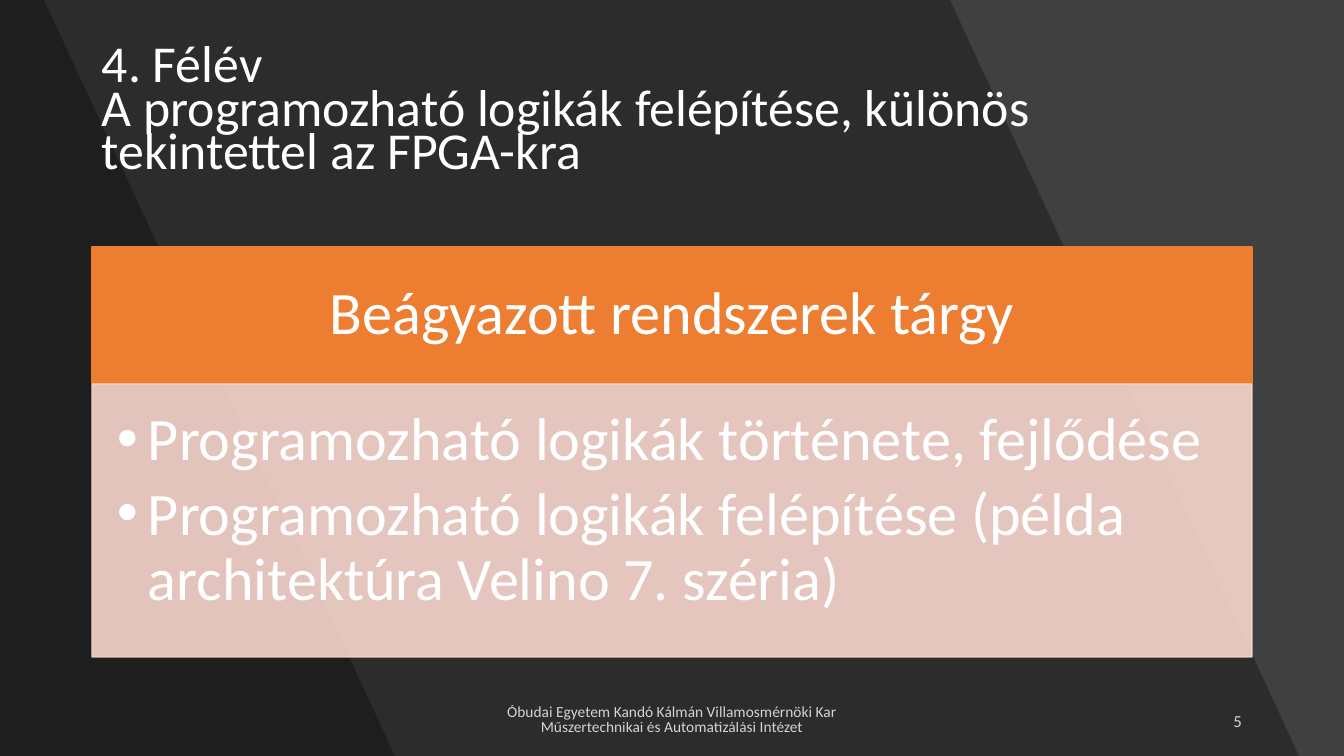
import pptx
import pptx.util
import pptx.dml.color
import pptx.enum.shapes
import pptx.enum.text
import pptx.oxml.ns
from lxml import etree

PX = 914400 / 100.8
WIDTH, HEIGHT = 1344, 756
COLORS = {
    "background": "404040",
    "shade": "000000",
    "text": "FFFFFF",
    "subject": "ED7D31",
    "topics": "F8D7CE",
}
ALIGN = pptx.enum.text.PP_ALIGN
ANCHOR = pptx.enum.text.MSO_ANCHOR


def paint(fill, color, opacity=100):
    """Give a fill a solid colour with an opacity in percent."""
    fill.solid()
    fill.fore_color.rgb = pptx.dml.color.RGBColor.from_string(COLORS[color])
    if opacity < 100:
        rgb = next(fill._xPr.iter(pptx.oxml.ns.qn("a:srgbClr")))
        etree.SubElement(rgb, pptx.oxml.ns.qn("a:alpha"), val=str(opacity * 1000))


def write(box, insets, lines, size, align=ALIGN.LEFT, anchor=ANCHOR.MIDDLE,
          spacing=1.0, opacity=100):
    """Fill a shape with paragraphs; insets are left, top, right, bottom in px."""
    frame = box.text_frame
    frame.word_wrap = True
    frame.vertical_anchor = anchor
    (frame.margin_left, frame.margin_top,
     frame.margin_right, frame.margin_bottom) = [round(i * PX) for i in insets]
    frame.text = "\n".join(lines)
    for paragraph in frame.paragraphs:
        paragraph.alignment = align
        paragraph.line_spacing = spacing
        for run in paragraph.runs:
            run.font.name = "Calibri"
            run.font.size = pptx.util.Pt(size)
            paint(run.font.fill, "text", opacity)


deck = pptx.Presentation()
deck.slide_width, deck.slide_height = round(WIDTH * PX), round(HEIGHT * PX)
slide = deck.slides.add_slide(deck.slide_layouts[6])
paint(slide.background.fill, "background")

# Slanted shades: top and bottom end of each right edge
for top_right, bottom_right in [(950, 1299), (44, 395)]:
    outline = slide.shapes.build_freeform(0, 0, scale=PX)
    outline.add_line_segments(
        [(top_right, 0), (bottom_right, HEIGHT), (0, HEIGHT)], close=True)
    shade = outline.convert_to_shape()
    shade.shadow.inherit = False
    paint(shade.fill, "shade", 30)
    shade.line.fill.background()

title = slide.shapes.add_textbox(*[round(v * PX) for v in (92, 40, 1160, 146)])
write(title, (10, 5, 10, 5),
      ["4. Félév\vA programozható logikák felépítése, különös tekintettel az FPGA-kra"],
      37, spacing=0.7)

# Subject header and the topics panel below it
panels = {}
for part, top, height, opacity in [("subject", 247, 136, 100), ("topics", 384, 273, 90)]:
    panel = slide.shapes.add_shape(
        pptx.enum.shapes.MSO_SHAPE.RECTANGLE,
        *[round(v * PX) for v in (92, top, 1160, height)])
    panel.shadow.inherit = False
    paint(panel.fill, part, opacity)
    paint(panel.line.fill, part, opacity)
    panel.line.width = pptx.util.Pt(1)
    panels[part] = panel

write(panels["subject"], (33, 19, 33, 19), ["Beágyazott rendszerek tárgy"],
      43, ALIGN.CENTER, spacing=0.9)
write(panels["topics"], (25, 25, 33, 38),
      ["Programozható logikák története, fejlődése",
       "Programozható logikák felépítése (példa architektúra Velino 7. széria)"],
      43, anchor=ANCHOR.TOP, spacing=0.9)
for topic in panels["topics"].text_frame.paragraphs:
    topic.space_after = pptx.util.Pt(6.5)
    properties = topic._p.get_or_add_pPr()
    properties.set("marL", str(round(31 * PX)))
    properties.set("indent", str(round(-31 * PX)))
    etree.SubElement(properties, pptx.oxml.ns.qn("a:buFont"), typeface="Arial")
    etree.SubElement(properties, pptx.oxml.ns.qn("a:buChar"), char="•")

for left, width, words, size, align, spacing in [
    (445, 454, "Óbudai Egyetem Kandó Kálmán Villamosmérnöki Kar "
               "Műszertechnikai és Automatizálási Intézet", 11, ALIGN.CENTER, 0.8),
    (950, 302, "5", 12, ALIGN.RIGHT, 1.0),
]:
    footer = slide.shapes.add_textbox(*[round(v * PX) for v in (left, 701, width, 40)])
    write(footer, (10, 5, 10, 5), [words], size, align, spacing=spacing, opacity=80)

deck.save("out.pptx")
